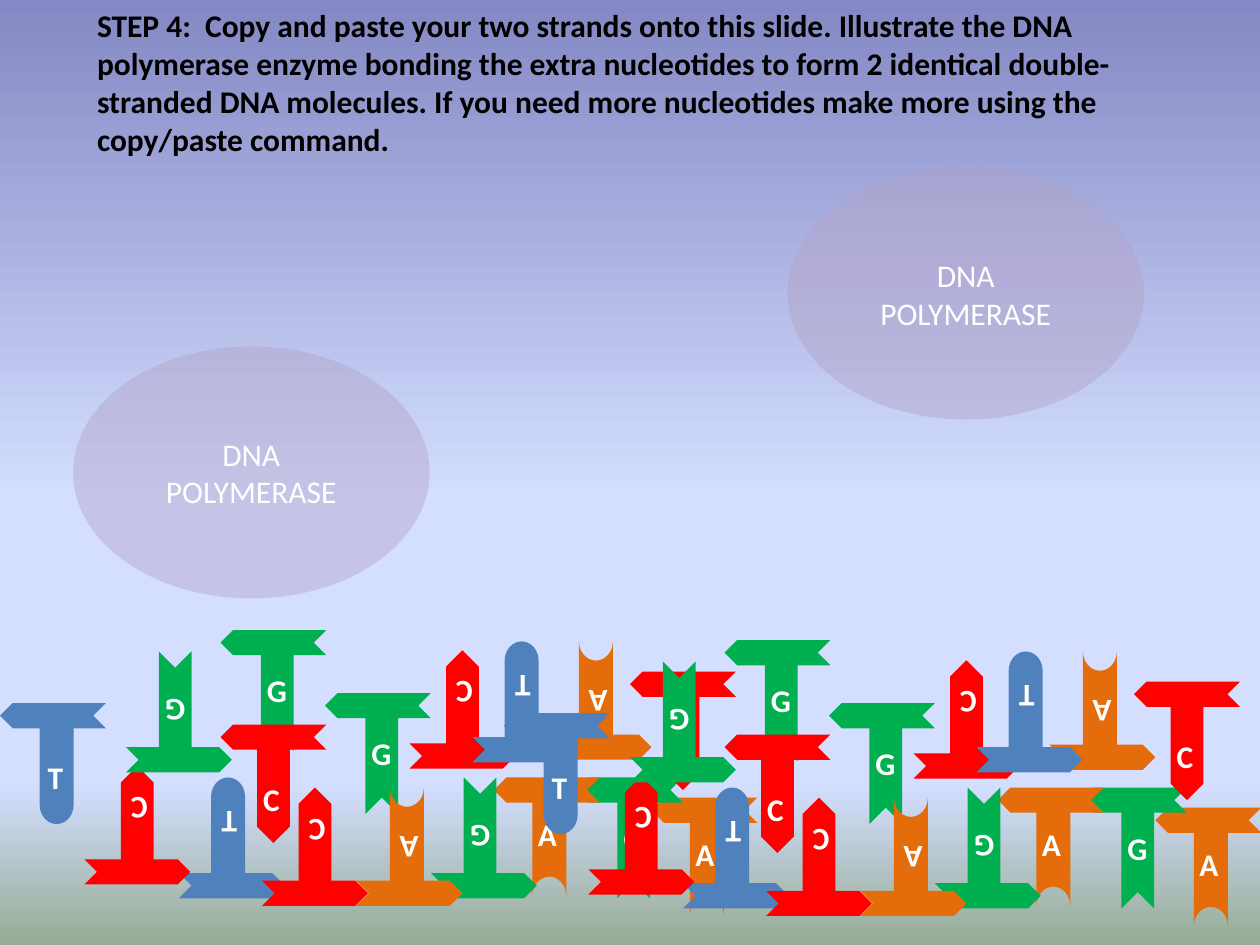
"""Build the DNA replication slide: polymerase enzymes above two sets of loose nucleotides."""
from copy import deepcopy

from pptx import Presentation
from pptx.dml.color import RGBColor
from pptx.enum.shapes import MSO_SHAPE as Preset
from pptx.enum.text import MSO_ANCHOR as Anchor, MSO_AUTO_SIZE as AutoSize, PP_ALIGN as Align
from pptx.oxml.ns import qn
from pptx.util import Inches, Pt

STEP = ("STEP 4:  Copy and paste your two strands onto this slide. Illustrate the DNA "
        "polymerase enzyme bonding the extra nucleotides to form 2 identical double-stranded "
        "DNA molecules. If you need more nucleotides make more using the copy/paste command.")
ENZYME = "DNA POLYMERASE"
COLORS = {"T": "4F81BD", "C": "FF0000", "G": "00B050", "A": "E46C0A",
          "enzyme": "B3A2C7", "light": "FFFFFF", "dark": "000000"}
SKY = [(0, "8488C4"), (0.53, "D4DEFF"), (0.83, "D4DEFF"), (1, "96AB94")]
ENZYME_SIZE = (2.83, 2)
ENZYME_SPOTS = [(0.58, 2.75), (6.25, 1.33)]
ENZYME_ALPHA = 44

BAR = (0.84, 0.2)
LETTER_BOX = (0.34, 0.4)
ROUND, POINTED = Preset.FLOWCHART_STORED_DATA, Preset.CHEVRON
BASES = {
    "T": {"stem": ROUND, "size": (0.92, 0.27), "turn": 270, "stem_at": (0.03, 0.4), "letter_at": (0.03, 0.49)},
    "C": {"stem": POINTED, "size": (0.92, 0.26), "turn": 90, "stem_at": (0, 0.38), "letter_at": (-0.01, 0.49)},
    "G": {"stem": POINTED, "size": (0.92, 0.26), "turn": 270, "stem_at": (0.03, 0.4), "letter_at": (0.02, 0.38)},
    "A": {"stem": ROUND, "size": (0.92, 0.27), "turn": 90, "stem_at": (0.02, 0.38), "letter_at": (0, 0.35)},
}
UP, DOWN = 0, 180
NUCLEOTIDES = [
    ("T", DOWN, 1.42, 6.93), ("C", DOWN, 0.67, 6.82), ("G", DOWN, 1, 5.93),
    ("A", UP, 5.17, 6.33), ("G", UP, 4.58, 6.17), ("A", UP, 3.92, 6.17),
    ("C", DOWN, 3.25, 5.9), ("G", DOWN, 3.42, 6.93), ("A", DOWN, 4.33, 5.83),
    ("C", UP, 5, 5.33), ("G", UP, 1.75, 5), ("T", UP, 0, 5.58),
    ("C", UP, 1.75, 5.75), ("T", DOWN, 3.75, 5.85), ("G", UP, 2.58, 5.5),
    ("C", DOWN, 2.08, 6.99), ("A", DOWN, 2.83, 6.99),
]
SET_SHIFTS = [(0, 0), (4, 0.08)]


def rgb(name):
    return RGBColor.from_string(COLORS[name])


def style(paragraph, color, bold=False):
    font = paragraph.font
    font.name, font.size, font.bold = "Calibri", Pt(18), bold
    font.color.rgb = rgb(color)


def centered(middle, size):
    corner = [m - s / 2 for m, s in zip(middle, size)]
    return [Inches(v) for v in (*corner, *size)]


def add_solid(shapes, preset, box, color, turn=0):
    solid = shapes.add_shape(preset, *box)
    solid.rotation = turn
    solid.shadow.inherit = False
    solid.fill.solid()
    solid.fill.fore_color.rgb = rgb(color)
    solid.line.fill.background()
    return solid


def add_nucleotide(slide, letter, facing, left, top):
    base = BASES[letter]
    sign = 1 if facing == UP else -1
    hub = (left + BAR[0] / 2, top + BAR[1] / 2)
    stem_middle, letter_middle = (
        [h + sign * d for h, d in zip(hub, base[part])] for part in ("stem_at", "letter_at"))
    shapes = slide.shapes.add_group_shape().shapes
    add_solid(shapes, base["stem"], centered(stem_middle, base["size"]), letter,
              (base["turn"] + facing) % 360)
    add_solid(shapes, POINTED, centered(hub, BAR), letter, 180 - facing)
    label = shapes.add_textbox(*centered(letter_middle, LETTER_BOX))
    label.rotation = facing
    label.text_frame.text = letter
    label.text_frame.word_wrap = False
    label.text_frame.auto_size = AutoSize.SHAPE_TO_FIT_TEXT
    style(label.text_frame.paragraphs[0], "light", bold=True)


def add_enzyme(slide, spot):
    box = [Inches(v) for v in (*spot, *ENZYME_SIZE)]
    enzyme = add_solid(slide.shapes, Preset.OVAL, box, "enzyme")
    tint = next(enzyme._element.spPr.iter(qn("a:srgbClr")))
    tint.makeelement(qn("a:alpha"))
    alpha = tint.makeelement(qn("a:alpha"), {"val": str(ENZYME_ALPHA * 1000)})
    tint.append(alpha)
    frame = enzyme.text_frame
    frame.text = ENZYME
    frame.word_wrap = True
    frame.vertical_anchor = Anchor.MIDDLE
    frame.paragraphs[0].alignment = Align.CENTER
    style(frame.paragraphs[0], "light")


def paint_sky(slide):
    fill = slide.background.fill
    fill.gradient()
    fill.gradient_angle = 270
    stops = next(slide._element.iter(qn("a:gsLst")))
    while len(stops) < len(SKY):
        stops.append(deepcopy(stops[-1]))
    for stop, (position, color) in zip(fill.gradient_stops, SKY):
        stop.position = position
        stop.color.rgb = RGBColor.from_string(color)


def write_step(slide):
    title = slide.shapes.title
    title.left, title.top, title.width, title.height = (Inches(v) for v in (0.67, 0, 8.5, 1.31))
    frame = title.text_frame
    frame.text = STEP
    frame.word_wrap = True
    frame.auto_size = AutoSize.SHAPE_TO_FIT_TEXT
    frame.vertical_anchor = Anchor.TOP
    frame.paragraphs[0].alignment = Align.LEFT
    style(frame.paragraphs[0], "dark", bold=True)


def main():
    deck = Presentation()
    deck.slide_width, deck.slide_height = Inches(10), Inches(7.5)
    slide = deck.slides.add_slide(deck.slide_layouts[5])
    paint_sky(slide)
    write_step(slide)
    add_enzyme(slide, ENZYME_SPOTS[0])
    for dx, dy in SET_SHIFTS:
        for letter, facing, left, top in NUCLEOTIDES:
            add_nucleotide(slide, letter, facing, left + dx, top + dy)
    add_enzyme(slide, ENZYME_SPOTS[1])
    deck.save("out.pptx")


if __name__ == "__main__":
    main()
